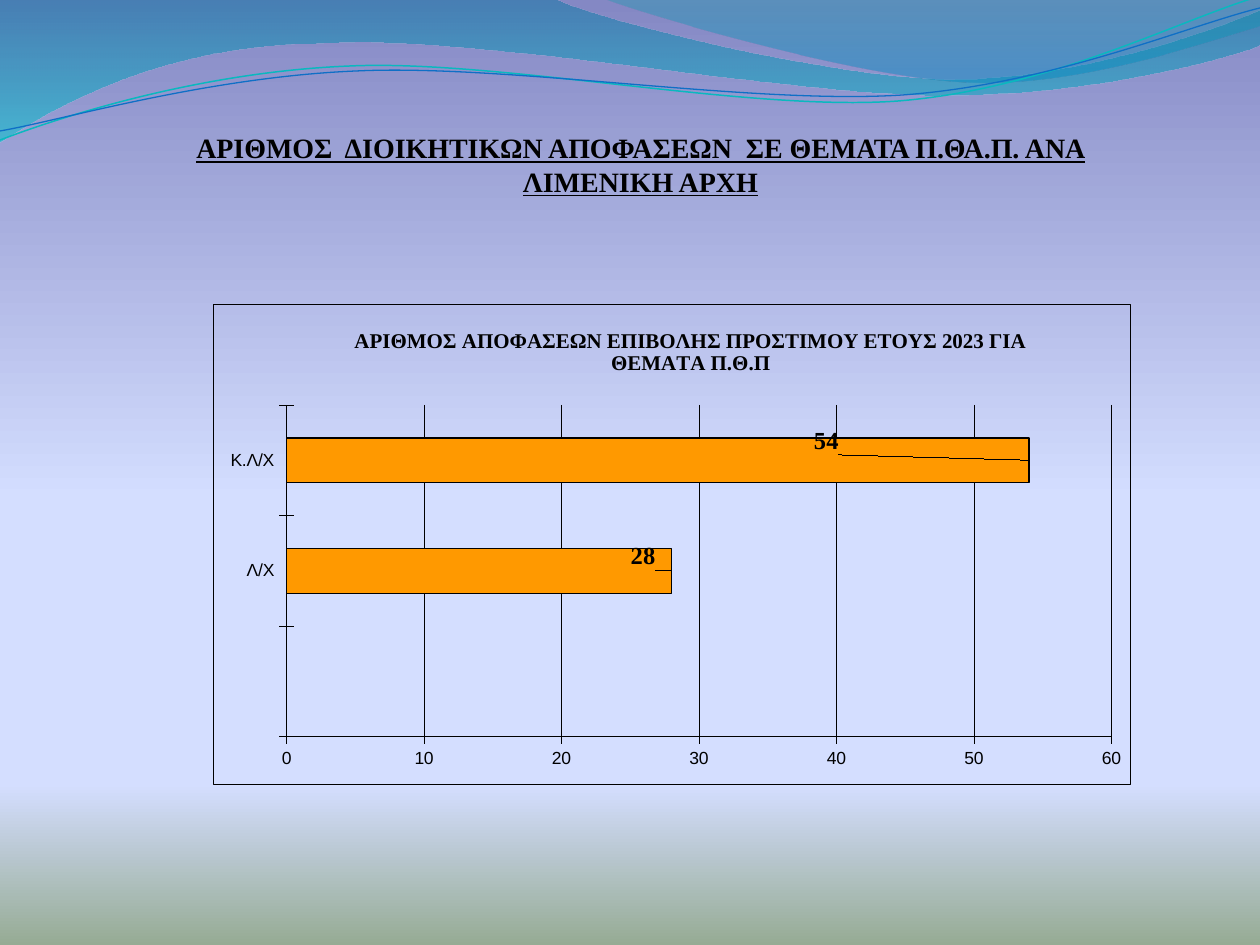
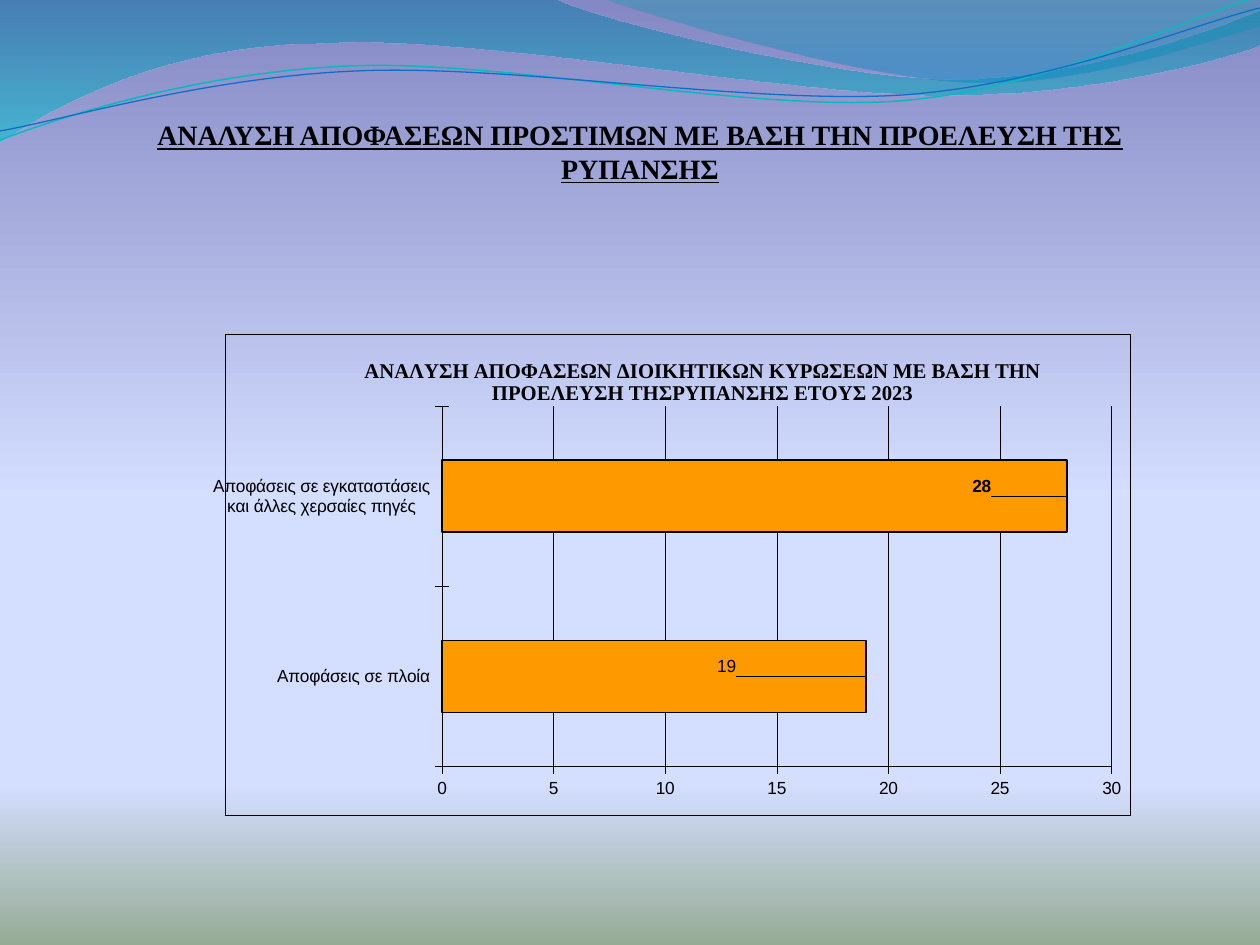
from dataclasses import dataclass

from pptx import Presentation
from pptx.chart.data import CategoryChartData
from pptx.dml.color import RGBColor
from pptx.enum.chart import XL_CHART_TYPE, XL_LABEL_POSITION, XL_TICK_LABEL_POSITION, XL_TICK_MARK
from pptx.enum.text import MSO_ANCHOR, MSO_AUTO_SIZE, PP_ALIGN
from pptx.oxml.ns import qn
from pptx.oxml.xmlchemy import OxmlElement
from pptx.util import Pt

BAR_CHART = XL_CHART_TYPE.BAR_CLUSTERED
OUTSIDE_END = XL_LABEL_POSITION.OUTSIDE_END
LABELS_LOW = XL_TICK_LABEL_POSITION.LOW
CROSS = XL_TICK_MARK.CROSS
NO_TICK = XL_TICK_MARK.NONE
BOTTOM = MSO_ANCHOR.BOTTOM
NO_AUTOFIT = MSO_AUTO_SIZE.NONE
CENTER = PP_ALIGN.CENTER

EMU_PER_PX = 914400 / 126
BLACK = RGBColor(0x00, 0x00, 0x00)
ORANGE = RGBColor(0xFF, 0x99, 0x00)
TEAL = RGBColor(0x0A, 0xB8, 0xBF)
BLUE = RGBColor(0x0F, 0x6F, 0xC6)
SERIF, SANS = "Times New Roman", "Arial"
HAIRLINE = 0.25
NUMBER_FORMAT = "#,##0"

# Gradient stops: position %, colour, opacity %
SKY = [(0, RGBColor(0x84, 0x88, 0xC4), 100), (53, RGBColor(0xD4, 0xDE, 0xFF), 100),
       (83, RGBColor(0xD4, 0xDE, 0xFF), 100), (100, RGBColor(0x96, 0xAB, 0x94), 100)]
WIDE_WAVE_STOPS = [(0, RGBColor(0x00, 0x74, 0xA1), 45), (100, RGBColor(0x00, 0xC6, 0xCF), 55)]
RIGHT_WAVE_STOPS = [(0, RGBColor(0x00, 0xA1, 0xA9), 30), (80, RGBColor(0x00, 0x8B, 0xBF), 45)]

# Outlines in px: a start point, then lines (2 numbers) and curves (6 numbers)
WIDE_WAVE = [(0, -1), (554, -1), (600, 21, 837, 79, 955, 79), (1075, 79, 1207, 33, 1260, 11),
             (1261, 45), (1239, 55, 1096, 96, 940, 95), (784, 95, 481, 35, 324, 43),
             (163, 44, 58, 105, -1, 142)]
RIGHT_WAVE = [(604, -1), (641, 14, 859, 78, 969, 82), (1079, 87, 1211, 40, 1260, 26), (1260, 0)]
TEAL_STRAND = [(0, 140), (60, 117, 199, 72, 349, 66), (498, 59, 747, 112, 898, 101),
               (1049, 89, 1182, 19, 1257, -3)]
BLUE_STRAND = [(0, 131), (59, 121, 207, 77, 357, 71), (508, 64, 752, 105, 903, 95),
               (1053, 84, 1187, 26, 1260, 8)]


@dataclass
class Bar:
    category: str
    value: int | None
    label_shift: tuple = (0, 0)
    label_bold: bool = True
    outline: float = 1


def px(length):
    return round(length * EMU_PER_PX)


def add_child(parent, tag, **attributes):
    child = OxmlElement(tag)
    for name, value in attributes.items():
        child.set(name, str(value))
    parent.append(child)
    return child


def set_gradient(fill, owner, stops):
    """Fill from top to bottom; owner is the element that holds the fill."""
    fill.gradient()
    fill.gradient_angle = 270
    stop_list = next(owner.iter(qn("a:gsLst")))
    for old_stop in list(stop_list):
        stop_list.remove(old_stop)
    for position, color, opacity in stops:
        stop = add_child(stop_list, "a:gs", pos=position * 1000)
        color_element = add_child(stop, "a:srgbClr", val=color)
        if opacity < 100:
            add_child(color_element, "a:alpha", val=opacity * 1000)


def set_layout(parent, index, **values):
    """Place a chart part by fractions of the chart's size."""
    for old_layout in parent.findall(qn("c:layout")):
        parent.remove(old_layout)
    layout = OxmlElement("c:layout")
    parent.insert(index, layout)
    manual = add_child(layout, "c:manualLayout")
    for name, value in values.items():
        add_child(manual, f"c:{name}", val=value)


def style_font(font, name, size, bold=False):
    font.name = name
    font.size = Pt(size)
    font.bold = bold
    font.color.rgb = BLACK


def style_line(line, width, color=BLACK):
    line.color.rgb = color
    line.width = Pt(width)


class Deck:
    def __init__(self):
        self.presentation = Presentation()
        self.presentation.slide_width = px(1260)
        self.presentation.slide_height = px(945)
        self.layout = self.presentation.slide_layouts[5]
        set_gradient(self.layout.background.fill, self.layout.element, SKY)
        self.slide = None

    def new_slide(self):
        self.slide = self.presentation.slides.add_slide(self.layout)

    def outline(self, segments, closed):
        points = [point for segment in segments
                  for point in zip(segment[::2], segment[1::2])]
        builder = self.slide.shapes.build_freeform(*points[0], scale=EMU_PER_PX)
        builder.add_line_segments(points[1:], close=closed)
        shape = builder.convert_to_shape()
        shape.shadow.inherit = False
        # Join three straight steps into each curve
        steps = iter(list(shape.element.iter(qn("a:lnTo"))))
        for segment in segments[1:]:
            step = next(steps)
            if len(segment) == 6:
                curve = OxmlElement("a:cubicBezTo")
                step.addprevious(curve)
                for part in (step, next(steps), next(steps)):
                    curve.append(part[0])
                    part.getparent().remove(part)
        return shape

    def wave(self, segments, stops):
        shape = self.outline(segments, closed=True)
        set_gradient(shape.fill, shape.element, stops)
        shape.line.fill.background()
        return shape

    def strand(self, segments, color, width):
        shape = self.outline(segments, closed=False)
        shape.fill.background()
        style_line(shape.line, width, color)
        return shape

    def share(self, shapes):
        """Move shapes from the slide to the layout, behind its placeholders."""
        for index, shape in enumerate(shapes, start=2):
            self.layout.shapes.element.insert(index, shape.element)

    def title(self, text, left, top, width, height):
        title = self.slide.shapes.title
        title.left, title.top, title.width, title.height = map(px, (left, top, width, height))
        frame = title.text_frame
        frame.text = text
        frame.word_wrap = True
        frame.auto_size = NO_AUTOFIT
        frame.vertical_anchor = BOTTOM
        frame.margin_left = frame.margin_right = frame.margin_bottom = 0
        frame.margin_top = px(6)
        paragraph = frame.paragraphs[0]
        paragraph.alignment = CENTER
        font = paragraph.runs[0].font
        style_font(font, SERIF, 16, bold=True)
        font.underline = True

    def bar_chart(self, top, heading, heading_place, plot_place, bars, maximum, step, label_font):
        data = CategoryChartData(number_format=NUMBER_FORMAT)
        data.categories = [bar.category for bar in bars]
        data.add_series("Series 1", [bar.value for bar in bars])
        chart = self.slide.shapes.add_chart(
            BAR_CHART, px(213), px(top), px(917), px(481), data).chart
        chart.has_legend = False
        style_font(chart.font, SANS, 10)
        self.chart_frame(chart, heading, heading_place, plot_place)
        self.axes(chart, maximum, step)
        self.bars(chart, bars, label_font)

    def chart_frame(self, chart, heading, heading_place, plot_place):
        # Heading
        chart.has_title = True
        frame = chart.chart_title.text_frame
        frame.text = heading
        style_font(frame.paragraphs[0].runs[0].font, SERIF, 12, bold=True)
        x, y = heading_place
        title_element = next(chart.element.iter(qn("c:title")))
        set_layout(title_element, 1, xMode="edge", yMode="edge", x=x, y=y)
        # Plot area
        x, y, width, height = plot_place
        set_layout(next(chart.element.iter(qn("c:plotArea"))), 0, layoutTarget="inner",
                   xMode="edge", yMode="edge", x=x, y=y, w=width, h=height)
        # Border
        properties = OxmlElement("c:spPr")
        add_child(properties, "a:noFill")
        line = add_child(properties, "a:ln", w=Pt(HAIRLINE))
        add_child(add_child(line, "a:solidFill"), "a:srgbClr", val=BLACK)
        chart.element.find(qn("c:chart")).addnext(properties)

    def axes(self, chart, maximum, step):
        for axis in (chart.category_axis, chart.value_axis):
            axis.major_tick_mark = CROSS
            axis.minor_tick_mark = NO_TICK
            style_line(axis.format.line, HAIRLINE)
            style_font(axis.tick_labels.font, SANS, 10)
        chart.category_axis.tick_label_position = LABELS_LOW
        value_axis = chart.value_axis
        value_axis.minimum_scale, value_axis.maximum_scale = 0, maximum
        value_axis.major_unit = step
        value_axis.has_major_gridlines = True
        style_line(value_axis.major_gridlines.format.line, HAIRLINE)

    def bars(self, chart, bars, label_font):
        plot = chart.plots[0]
        plot.gap_width = 150
        plot.vary_by_categories = False
        series = plot.series[0]
        series.format.fill.solid()
        series.format.fill.fore_color.rgb = ORANGE
        style_line(series.format.line, 1)
        labels = series.data_labels
        labels.show_value = True
        labels.position = OUTSIDE_END
        style_font(labels.font, *label_font, bold=True)
        for index, bar in enumerate(bars):
            if bar.value is None:
                continue
            point = series.points[index]
            if bar.outline != 1:
                point.format.fill.solid()
                point.format.fill.fore_color.rgb = ORANGE
                style_line(point.format.line, bar.outline)
            label = point.data_label
            style_font(label.font, *label_font, bold=bar.label_bold)
            label.position = OUTSIDE_END
            x, y = bar.label_shift
            newest_label = list(chart.element.iter(qn("c:dLbl")))[-1]
            set_layout(newest_label, 1, x=x, y=y)


def main():
    deck = Deck()

    # Fines by port authority
    deck.new_slide()
    deck.share([deck.wave(WIDE_WAVE, WIDE_WAVE_STOPS),
                deck.wave(RIGHT_WAVE, RIGHT_WAVE_STOPS),
                deck.strand(TEAL_STRAND, TEAL, 0.85),
                deck.strand(BLUE_STRAND, BLUE, 0.75)])
    deck.title("ΑΡΙΘΜΟΣ  ΔΙΟΙΚΗΤΙΚΩΝ ΑΠΟΦΑΣΕΩΝ  ΣΕ ΘΕΜΑΤΑ Π.ΘΑ.Π. ΑΝΑ ΛΙΜΕΝΙΚΗ ΑΡΧΗ",
               154, 59, 973, 139)
    deck.bar_chart(
        304, "ΑΡΙΘΜΟΣ ΑΠΟΦΑΣΕΩΝ ΕΠΙΒΟΛΗΣ ΠΡΟΣΤΙΜΟΥ ΕΤΟΥΣ 2023 ΓΙΑ ΘΕΜΑΤΑ Π.Θ.Π",
        (0.15, 0.04), (0.08, 0.21, 0.9, 0.69),
        [Bar("", None),
         Bar("Λ/Χ", 28, (-0.05, -0.03), outline=HAIRLINE),
         Bar("Κ.Λ/Χ", 54, (-0.24, -0.04))],
        maximum=60, step=10, label_font=(SERIF, 14))

    # Fines by source of pollution
    deck.new_slide()
    deck.title("ΑΝΑΛΥΣΗ ΑΠΟΦΑΣΕΩΝ ΠΡΟΣΤΙΜΩΝ ΜΕ ΒΑΣΗ ΤΗΝ ΠΡΟΕΛΕΥΣΗ ΤΗΣ ΡΥΠΑΝΣΗΣ",
               144, 97, 992, 88)
    deck.bar_chart(
        334, "ΑΝΑΛΥΣΗ ΑΠΟΦΑΣΕΩΝ ΔΙΟΙΚΗΤΙΚΩΝ ΚΥΡΩΣΕΩΝ ΜΕ ΒΑΣΗ ΤΗΝ ΠΡΟΕΛΕΥΣΗ ΤΗΣΡΥΠΑΝΣΗΣ ΕΤΟΥΣ 2023",
        (0.15, 0.04), (0.24, 0.15, 0.74, 0.75),
        [Bar("Αποφάσεις σε πλοία", 19, (-0.17, -0.02), label_bold=False),
         Bar("Αποφάσεις σε εγκαταστάσεις και άλλες χερσαίες πηγές", 28, (-0.11, -0.02))],
        maximum=30, step=5, label_font=(SANS, 10))

    deck.presentation.save("out.pptx")


if __name__ == "__main__":
    main()
